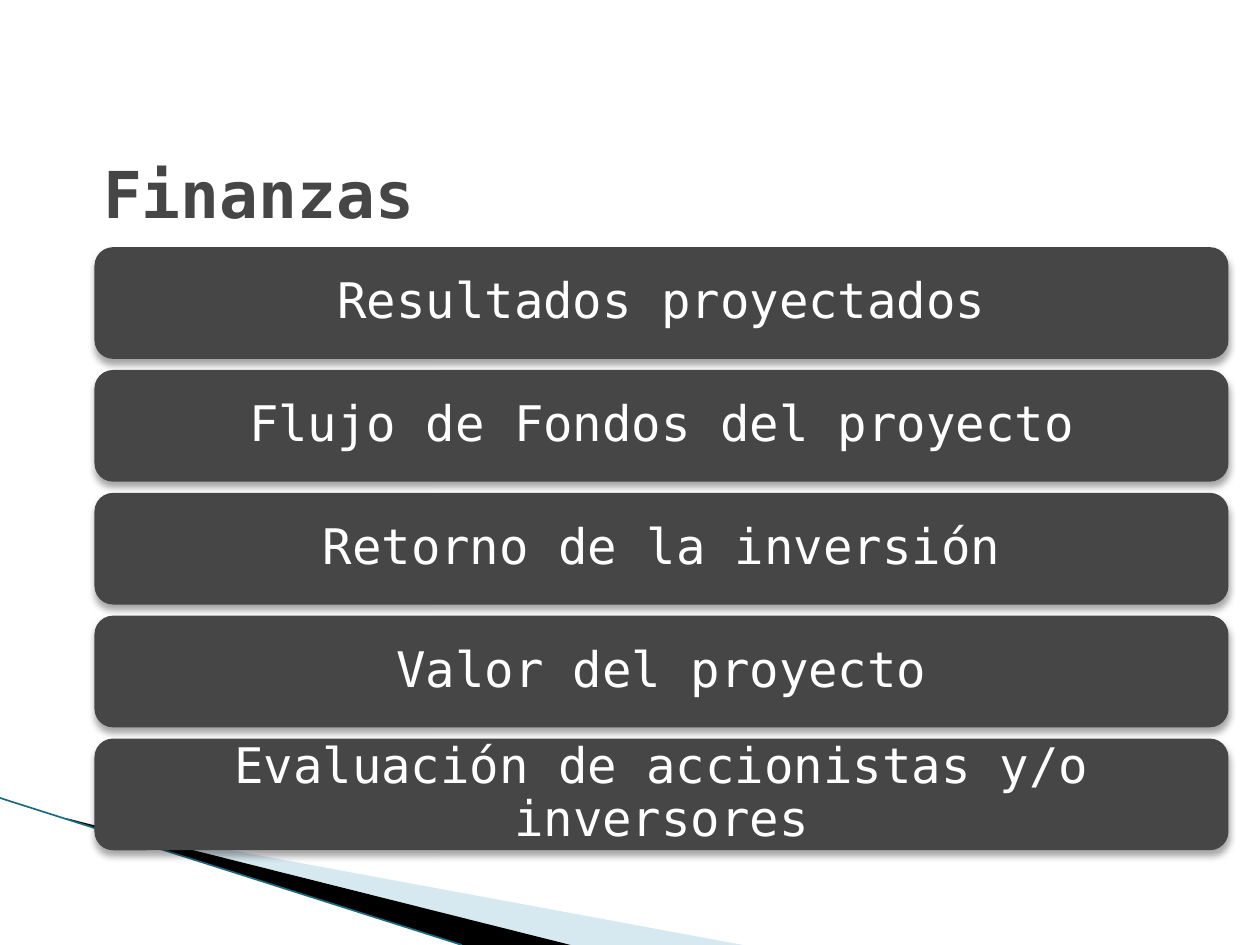
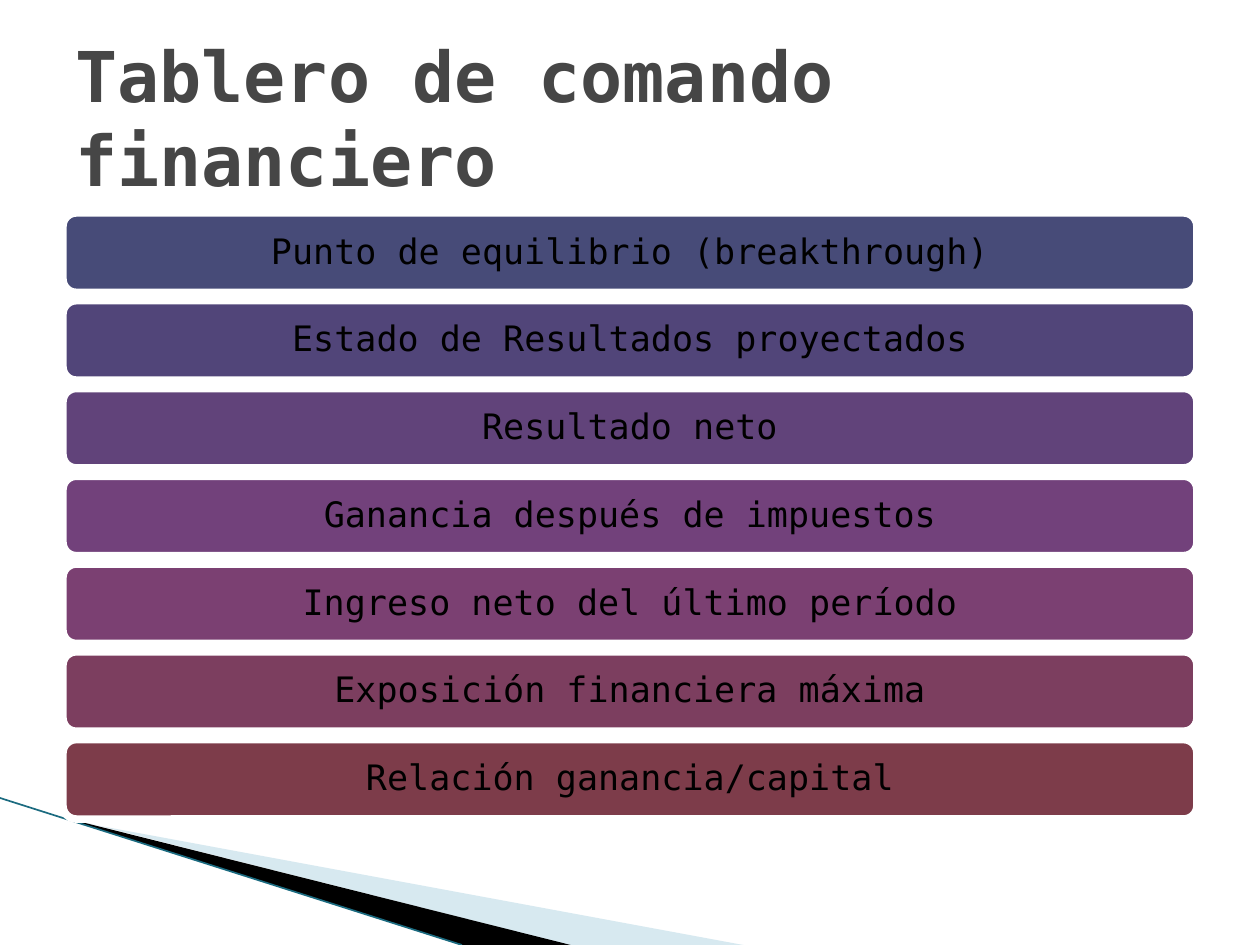
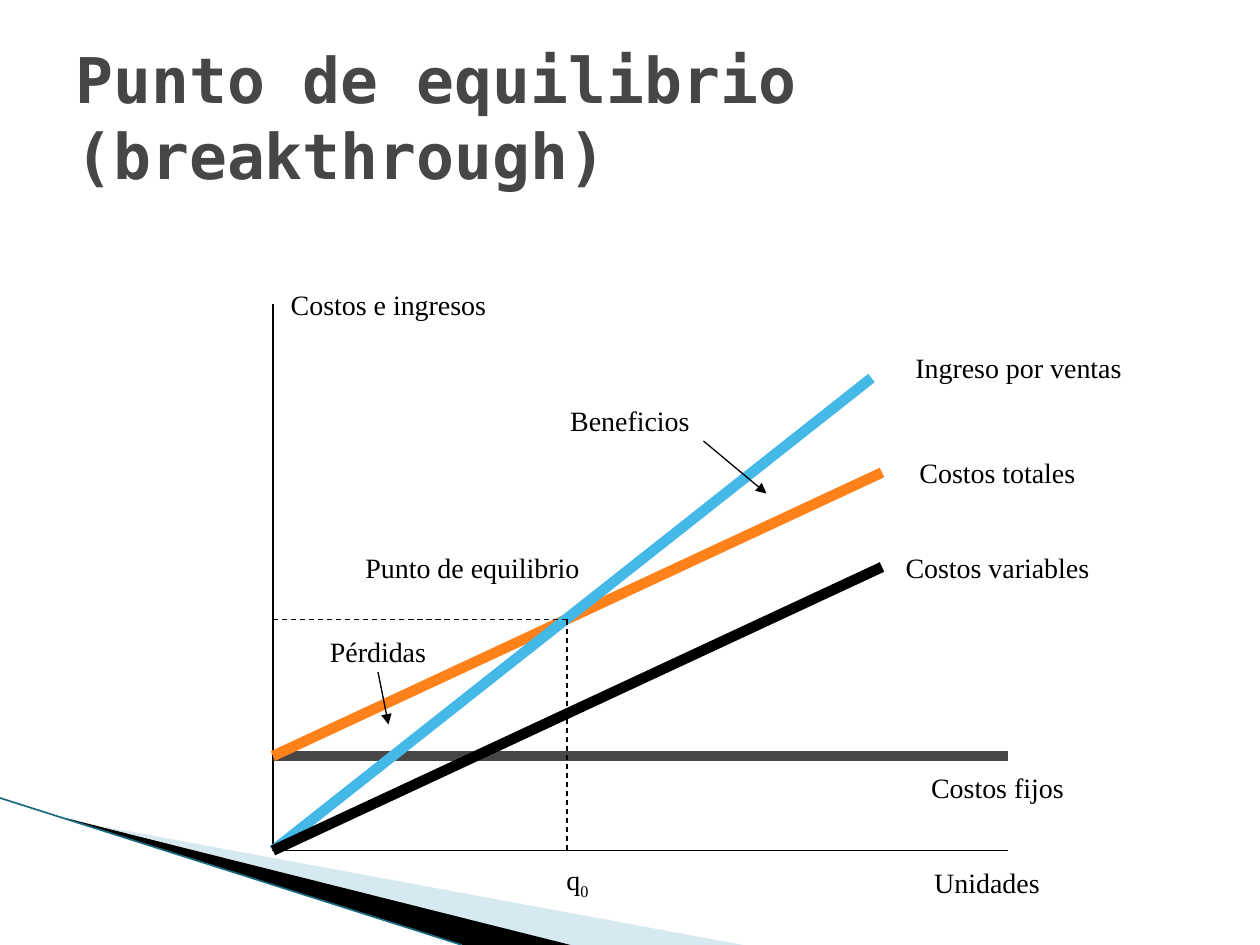
from typing import NamedTuple

from lxml import etree
from pptx import Presentation
from pptx import util as u
from pptx.dml.color import RGBColor
from pptx.enum import dml, shapes, text
from pptx.oxml import ns

# Slide size and its grid: 120 columns by 90 rows
WIDE, HIGH = u.Inches(10), u.Inches(7.5)
CELL = WIDE / 120

# Colours
BLACK = RGBColor(0x00, 0x00, 0x00)
WHITE = RGBColor(0xFF, 0xFF, 0xFF)
GREY = RGBColor(0x46, 0x46, 0x46)
PALE = RGBColor(0xA0, 0xCB, 0xDC)
TEAL = RGBColor(0x1B, 0x6B, 0x80)
ORANGE = RGBColor(0xFF, 0x81, 0x19)
SKY = RGBColor(0x44, 0xB9, 0xE8)
RAMP = [RGBColor.from_string(c) for c in
        ("474B78", "514579", "61437A", "72417B", "7B4072", "7C3E5F", "7D3C4A")]

# Font formats
MONO, SERIF = "DejaVu Sans Mono", "Times New Roman"
TITLE = {"name": MONO, "bold": True, "color": GREY}
LABEL = {"name": SERIF, "size": u.Pt(16), "color": BLACK}


class Stack(NamedTuple):
    """Equal bars, one under the other, in grid cells."""
    left: float
    top: float
    step: float
    high: float
    inset: float
    size: float
    ink: RGBColor
    fills: list
    items: list
    edge: float = 0


class Line(NamedTuple):
    """A straight line between two grid points."""
    x1: float
    y1: float
    x2: float
    y2: float
    color: RGBColor = BLACK
    width: float = 0.75
    dash: bool = False
    arrow: bool = False


class Label(NamedTuple):
    """A chart label, placed by the middle of its box."""
    mid_x: float
    mid_y: float
    words: str
    sub: str = ""


def grid(*cells: float) -> list:
    return [round(c * CELL) for c in cells]


def style(font, form: dict) -> None:
    for key, val in form.items():
        if key == "color":
            font.color.rgb = val
        else:
            setattr(font, key, val)


def frame(shape, form: dict) -> None:
    for key, val in form.items():
        setattr(shape.text_frame, key, val)


def add_xml(host, tag: str, **attrs: str):
    return etree.SubElement(host, ns.qn(tag), attrs)


def paint(shape, color: RGBColor) -> None:
    shape.shadow.inherit = False
    shape.fill.solid()
    shape.fill.fore_color.rgb = color
    shape.line.fill.background()


# Parts shared by the slides
def add_line(slide, line: Line) -> None:
    link = slide.shapes.add_connector(
        shapes.MSO_CONNECTOR.STRAIGHT, *grid(line.x1, line.y1, line.x2, line.y2))
    link.line.color.rgb = line.color
    link.line.width = u.Pt(line.width)
    if line.dash:
        link.line.dash_style = dml.MSO_LINE.DASH
    if line.arrow:
        add_xml(link.line._get_or_add_ln(), "a:tailEnd", type="triangle")
    add_xml(link._element.spPr, "a:effectLst")


def add_wedge(slide, color: RGBColor, shares: list, alpha: int = 100) -> None:
    points = [(round(x * WIDE), round(y * HIGH)) for x, y in shares]
    build = slide.shapes.build_freeform(*points[0])
    build.add_line_segments(points[1:], close=True)
    wedge = build.convert_to_shape()
    paint(wedge, color)
    if alpha < 100:
        tint = wedge._element.spPr.find(".//" + ns.qn("a:srgbClr"))
        add_xml(tint, "a:alpha", val=str(alpha * 1000))


def add_page(deck):
    slide = deck.slides.add_slide(deck.slide_layouts[6])
    add_wedge(slide, PALE, [(.055, .868), (.59, 1), (.452, 1), (.055, .866)], 42)
    add_wedge(slide, BLACK, [(.053, .866), (.453, 1), (.366, 1), (.054, .867)])
    add_line(slide, Line(0, 76, 44, 90, TEAL, 0.95))
    return slide


def add_title(slide, words: str, size: float, left: float = 6, top: float = 3.6,
              anchor=text.MSO_ANCHOR.MIDDLE) -> None:
    box = slide.shapes.add_textbox(*grid(left, top, 108, 15))
    frame(box, {"word_wrap": True, "vertical_anchor": anchor})
    run = box.text_frame.paragraphs[0].add_run()
    run.text = words
    style(run.font, TITLE | {"size": u.Pt(size)})


def add_stack(slide, stack: Stack) -> None:
    pad = u.Inches(stack.inset)
    form = {"word_wrap": True, "vertical_anchor": text.MSO_ANCHOR.MIDDLE}
    form |= {f"margin_{side}": pad for side in ("left", "right", "top", "bottom")}
    for i, (words, fill) in enumerate(zip(stack.items, stack.fills)):
        bar = slide.shapes.add_shape(
            shapes.MSO_SHAPE.ROUNDED_RECTANGLE,
            *grid(stack.left, stack.top + i * stack.step, 108, stack.high))
        paint(bar, fill)
        if stack.edge:
            bar.line.color.rgb = WHITE
            bar.line.width = u.Pt(stack.edge)
        else:
            add_shade(bar)
        frame(bar, form)
        para = bar.text_frame.paragraphs[0]
        para.alignment = text.PP_ALIGN.CENTER
        para.line_spacing = 0.9
        run = para.add_run()
        run.text = words
        style(run.font, {"name": MONO, "size": u.Pt(stack.size), "color": stack.ink})


def add_shade(shape) -> None:
    host = shape._element.spPr.find(ns.qn("a:effectLst"))
    shade = add_xml(host, "a:outerShdw", blurRad=str(u.Pt(4)), dist=str(u.Pt(3)),
                    dir="5400000", rotWithShape="0")
    tint = add_xml(shade, "a:srgbClr", val=str(BLACK))
    add_xml(tint, "a:alpha", val="35000")


def add_label(slide, label: Label) -> None:
    box = slide.shapes.add_textbox(*grid(label.mid_x - 12, label.mid_y - 2, 24, 4))
    frame(box, {"word_wrap": False, "vertical_anchor": text.MSO_ANCHOR.MIDDLE})
    para = box.text_frame.paragraphs[0]
    para.alignment = text.PP_ALIGN.CENTER
    for words in filter(None, (label.words, label.sub)):
        run = para.add_run()
        run.text = words
        style(run.font, LABEL)
    if label.sub:
        run.font._element.set("baseline", "-25000")


# Contents
MONEY = Stack(9, 23.54, 11.7, 10.64, 0.12, 28, WHITE, [GREY] * 5, [
    "Resultados proyectados",
    "Flujo de Fondos del proyecto",
    "Retorno de la inversión",
    "Valor del proyecto",
    "Evaluación de accionistas y/o inversores",
])
BOARD = Stack(6, 20.28, 8.36, 7.57, 0.08, 20, BLACK, RAMP, [
    "Punto de equilibrio (breakthrough)",
    "Estado de Resultados proyectados",
    "Resultado neto",
    "Ganancia después de impuestos",
    "Ingreso neto del último período",
    "Exposición financiera máxima",
    "Relación ganancia/capital",
], edge=4.33)

# Break-even diagram: axes, cost and income lines, guides, arrows
LEFT, BASE, FIXED = 26, 81, 72
EVEN_X, EVEN_Y = 54, 59
LINES = [
    Line(LEFT, 29, LEFT, BASE),
    Line(LEFT, BASE, 96, BASE),
    Line(LEFT, FIXED, 96, FIXED, GREY, 6),
    Line(LEFT, FIXED, 84, 45, ORANGE, 6),
    Line(LEFT, BASE, 83, 36, SKY, 6),
    Line(LEFT, BASE, 84, 54, BLACK, 6),
    Line(EVEN_X, EVEN_Y, EVEN_X, BASE, dash=True),
    Line(EVEN_X, EVEN_Y, LEFT, EVEN_Y, dash=True),
    Line(67, 42, 73, 47, arrow=True),
    Line(36, 64, 37, 69, arrow=True),
]
LABELS = [
    Label(95, 54, "Costos variables"),
    Label(95, 45, "Costos totales"),
    Label(97, 35, "Ingreso por ventas"),
    Label(37, 29, "Costos e ingresos"),
    Label(95, 75, "Costos fijos"),
    Label(94, 84, "Unidades"),
    Label(45, 54, "Punto de equilibrio"),
    Label(55, 84, "q", "0"),
    Label(60, 40, "Beneficios"),
    Label(36, 62, "Pérdidas"),
]


def main() -> None:
    deck = Presentation()
    deck.slide_width, deck.slide_height = WIDE, HIGH

    # Finance topics
    slide = add_page(deck)
    add_stack(slide, MONEY)
    add_title(slide, "Finanzas", 36.9, 8.64, 7.6, text.MSO_ANCHOR.BOTTOM)

    # Finance dashboard
    slide = add_page(deck)
    add_stack(slide, BOARD)
    add_title(slide, "Tablero de comando financiero", 40)

    # Break-even point
    slide = add_page(deck)
    add_title(slide, "Punto de equilibrio (breakthrough)", 36)
    for line in LINES:
        add_line(slide, line)
    for label in LABELS:
        add_label(slide, label)

    deck.save("out.pptx")


if __name__ == "__main__":
    main()
